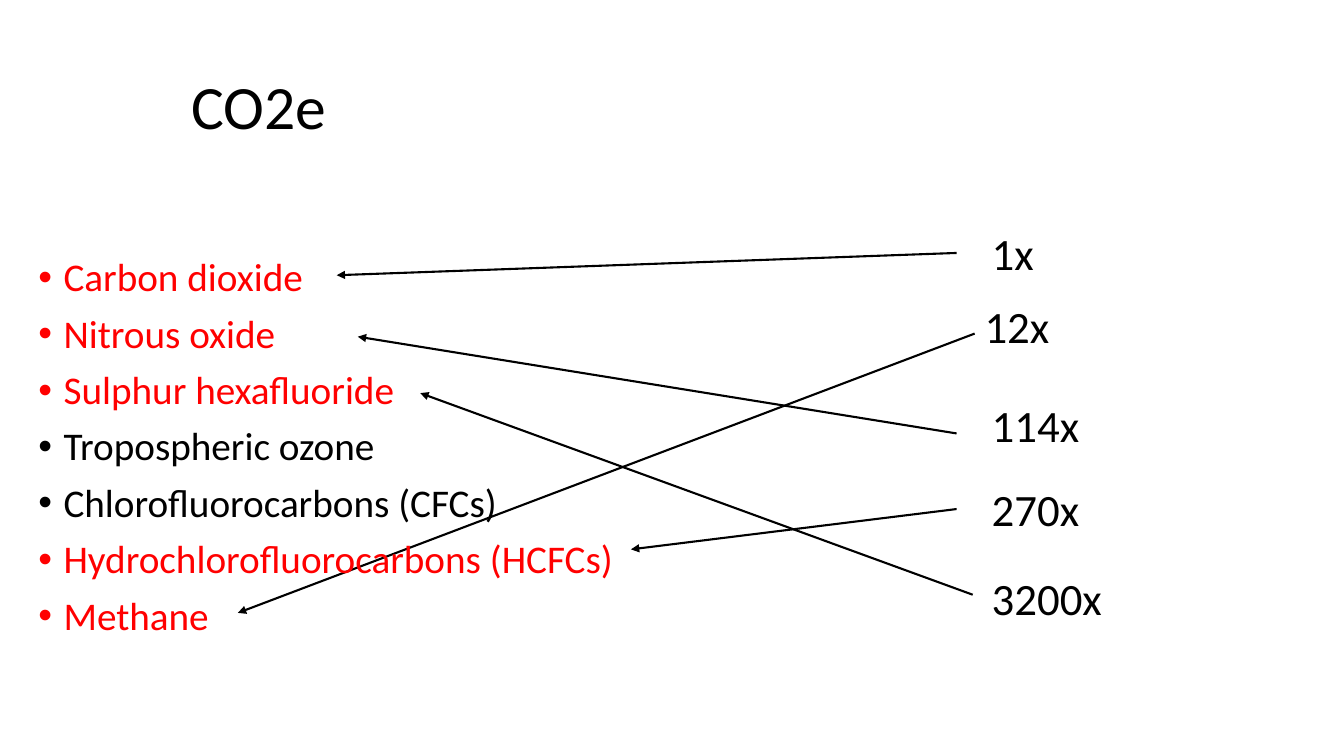
from lxml import etree
from pptx import Presentation
from pptx.dml.color import RGBColor
from pptx.enum.shapes import MSO_CONNECTOR
from pptx.enum.text import MSO_ANCHOR, MSO_AUTO_SIZE, PP_ALIGN
from pptx.oxml.ns import qn
from pptx.util import Pt

STRAIGHT = MSO_CONNECTOR.STRAIGHT
TOP = MSO_ANCHOR.TOP
LEFT = PP_ALIGN.LEFT
NO_FIT = MSO_AUTO_SIZE.NONE
GROW = MSO_AUTO_SIZE.SHAPE_TO_FIT_TEXT

BLACK = RGBColor(0x00, 0x00, 0x00)
RED = RGBColor(0xFF, 0x00, 0x00)

# Gas, and whether it is matched to a multiplier
GASES = [
    ("Carbon dioxide", True),
    ("Nitrous oxide", True),
    ("Sulphur hexafluoride", True),
    ("Tropospheric ozone", False),
    ("Chlorofluorocarbons (CFCs)", False),
    ("Hydrochlorofluorocarbons (HCFCs)", True),
    ("Methane", True),
]

# Multiplier, its box, and its arrow's start and end
MATCHES = [
    ("12x", (696.2, 210.2, 67.7, 46.1), (696.2, 238.3), (169.9, 437.8)),
    ("1x", (701.3, 157.7, 77, 46.1), (683.3, 180.7), (240.5, 196.6)),
    ("114x", (701.3, 280.8, 91.4, 46.1), (683.3, 309.6), (255.6, 240.5)),
    ("270x", (701.3, 340.6, 83.5, 46.1), (683.3, 363.6), (450.7, 392.4)),
    ("3200x", (701.3, 403.9, 108, 46.1), (694.8, 424.8), (300.2, 280.8)),
]


def apply(target, formats):
    for name, value in formats.items():
        setattr(target, name, value)


class MatchingSlide:
    font = "Calibri"
    title_size, multiplier_size, gas_size = 44, 32, 28
    bullet_indent = 18
    arrow_width = 1.5

    def __init__(self, presentation):
        self.slide = presentation.slides.add_slide(presentation.slide_layouts[1])

    def place(self, shape, box):
        for side, length in zip(("left", "top", "width", "height"), box):
            setattr(shape, side, Pt(length))

    def add_words(self, paragraph, words, size, color=BLACK):
        paragraph.alignment = LEFT
        run = paragraph.add_run()
        run.text = words
        apply(run.font, {"name": self.font, "size": Pt(size)})
        run.font.color.rgb = color

    def title(self, words, box):
        heading = self.slide.shapes.title
        self.place(heading, box)
        apply(heading.text_frame, {"vertical_anchor": TOP, "auto_size": GROW,
                                   "word_wrap": True})
        self.add_words(heading.text_frame.paragraphs[0], words, self.title_size)

    def gas_list(self, gases, box):
        """Fill the body placeholder and bring it in front of the arrows."""
        body = self.slide.placeholders[1]
        self.place(body, box)
        frame = body.text_frame
        apply(frame, {"vertical_anchor": TOP, "auto_size": NO_FIT, "word_wrap": True})
        for index, (gas, matched) in enumerate(gases):
            line = frame.add_paragraph() if index else frame.paragraphs[0]
            apply(line, {"line_spacing": 0.9, "space_before": Pt(10)})
            self.add_words(line, gas, self.gas_size, RED if matched else BLACK)
            properties = line._p.get_or_add_pPr()
            properties.set("marL", str(Pt(self.bullet_indent)))
            properties.set("indent", str(-Pt(self.bullet_indent)))
            etree.SubElement(properties, qn("a:buFont"), typeface="Arial")
            etree.SubElement(properties, qn("a:buChar"), char="•")
        body.element.getparent().append(body.element)

    def multiplier(self, words, box):
        label = self.slide.shapes.add_textbox(*map(Pt, box))
        apply(label.text_frame, {"word_wrap": True, "auto_size": GROW})
        self.add_words(label.text_frame.paragraphs[0], words, self.multiplier_size)

    def arrow(self, start, end):
        connector = self.slide.shapes.add_connector(STRAIGHT, *map(Pt, start + end))
        connector.line.width = Pt(self.arrow_width)
        connector.line.color.rgb = BLACK
        outline = connector.element.spPr.find(qn("a:ln"))
        etree.SubElement(outline, qn("a:tailEnd"), type="triangle")
        etree.SubElement(connector.element.spPr, qn("a:effectLst"))


def main():
    presentation = Presentation()
    apply(presentation, {"slide_width": Pt(960), "slide_height": Pt(540)})
    page = MatchingSlide(presentation)
    page.title("CO2e", (129.6, 44.6, 444.2, 60.5))
    for words, box, start, end in MATCHES:
        page.arrow(start, end)
        page.multiplier(words, box)
    page.gas_list(GASES, (20.2, 180.7, 430.6, 342.7))
    presentation.save("out.pptx")


if __name__ == "__main__":
    main()
